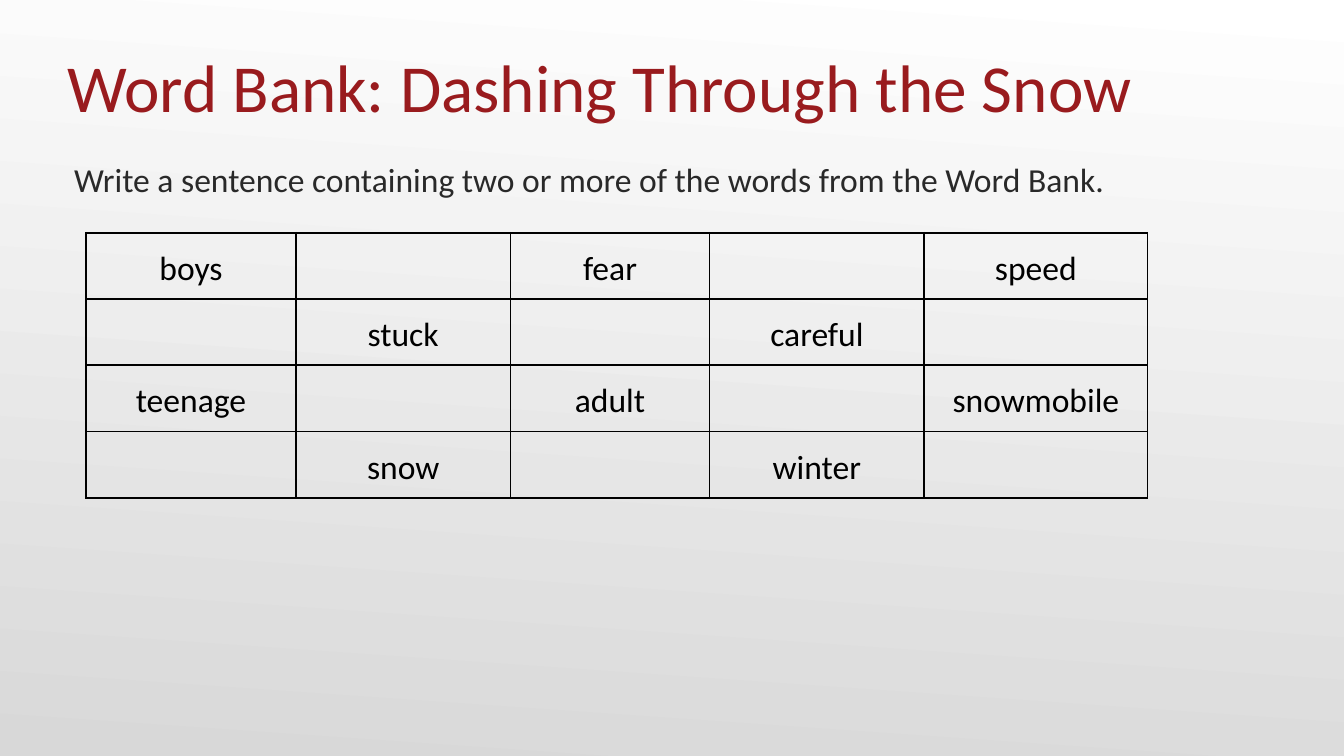
from dataclasses import dataclass

import pptx
import pptx.dml.color
import pptx.enum.text
import pptx.oxml
import pptx.oxml.ns
import pptx.util
from pptx.util import Cm

RGB = pptx.dml.color.RGBColor.from_string
ALIGN = pptx.enum.text.PP_ALIGN
ANCHOR = pptx.enum.text.MSO_ANCHOR


@dataclass(frozen=True)
class Theme:
    font: str = "Calibri"
    title_size: int = 36
    body_size: int = 18
    title_color: str = "991B1E"
    body_color: str = "292929"
    table_color: str = "000000"
    background_top: str = "FFFFFF"
    background_bottom: str = "D8D8D8"


THEME = Theme()

COLUMN_WIDTHS = [3.96, 4.06, 3.76, 4.06, 4.22]
ROW_HEIGHT = 1.25
WORD_BANK = [
    ["boys", "", "fear", "", "speed"],
    ["", "stuck", "", "careful", ""],
    ["teenage", "", "adult", "", "snowmobile"],
    ["", "snow", "", "winter", ""],
]


def set_background(slide):
    fill = slide.background.fill
    fill.gradient()
    fill.gradient_angle = 266
    colors = (THEME.background_top, THEME.background_bottom)
    for position, (stop, color) in enumerate(zip(fill.gradient_stops, colors)):
        stop.position = position
        stop.color.rgb = RGB(color)


def add_run(paragraph, text, size, color):
    run = paragraph.add_run()
    run.text = text
    run.font.name = THEME.font
    run.font.size = pptx.util.Pt(size)
    run.font.color.rgb = RGB(color)


def format_frame(text_frame, anchor, side_inset, top_inset):
    text_frame.word_wrap = True
    text_frame.auto_size = pptx.enum.text.MSO_AUTO_SIZE.NONE
    text_frame.vertical_anchor = anchor
    text_frame.margin_left = text_frame.margin_right = Cm(side_inset)
    text_frame.margin_top = Cm(top_inset)
    text_frame.margin_bottom = 0


def set_title(slide, text):
    title = slide.shapes.title
    title.left, title.top, title.width, title.height = Cm(1.27), Cm(0), Cm(22.86), Cm(2.39)
    format_frame(title.text_frame, ANCHOR.BOTTOM, 0, 0.13)
    paragraph = title.text_frame.paragraphs[0]
    paragraph.alignment = ALIGN.LEFT
    add_run(paragraph, text, THEME.title_size, THEME.title_color)


def add_instruction(slide, text):
    box = slide.shapes.add_textbox(Cm(1.27), Cm(3), Cm(22.86), Cm(1.68))
    format_frame(box.text_frame, ANCHOR.TOP, 0.13, 0)
    add_run(box.text_frame.paragraphs[0], text, THEME.body_size, THEME.body_color)


def add_borders(cell):
    properties = cell._tc.get_or_add_tcPr()
    namespace = pptx.oxml.ns.nsdecls("a")
    for index, side in enumerate(("lnL", "lnR", "lnT", "lnB")):
        line = pptx.oxml.parse_xml(
            f'<a:{side} {namespace} w="12700"><a:solidFill>'
            f'<a:srgbClr val="{THEME.table_color}"/></a:solidFill></a:{side}>'
        )
        properties.insert(index, line)


def fill_cell(cell, word):
    cell.fill.background()
    add_borders(cell)
    cell.margin_left = cell.margin_right = Cm(0.18)
    cell.margin_top = cell.margin_bottom = Cm(0.18)
    if word:
        paragraph = cell.text_frame.paragraphs[0]
        paragraph.alignment = ALIGN.CENTER
        paragraph.line_spacing = 1.15
        add_run(paragraph, word, THEME.body_size, THEME.table_color)


def add_word_table(slide, words):
    table = slide.shapes.add_table(
        len(words), len(COLUMN_WIDTHS), Cm(1.63), Cm(4.4),
        Cm(sum(COLUMN_WIDTHS)), Cm(ROW_HEIGHT * len(words)),
    ).table
    table.first_row = table.horz_banding = False
    for column, width in zip(table.columns, COLUMN_WIDTHS):
        column.width = Cm(width)
    for row, row_words in zip(table.rows, words):
        row.height = Cm(ROW_HEIGHT)
        for cell, word in zip(row.cells, row_words):
            fill_cell(cell, word)


def main():
    presentation = pptx.Presentation()
    presentation.slide_width, presentation.slide_height = Cm(25.4), Cm(14.29)
    slide = presentation.slides.add_slide(presentation.slide_layouts.get_by_name("Title Only"))
    set_background(slide)
    set_title(slide, "Word Bank: Dashing Through the Snow")
    add_instruction(slide, "Write a sentence containing two or more of the words from the Word Bank.")
    add_word_table(slide, WORD_BANK)
    presentation.save("out.pptx")


if __name__ == "__main__":
    main()
